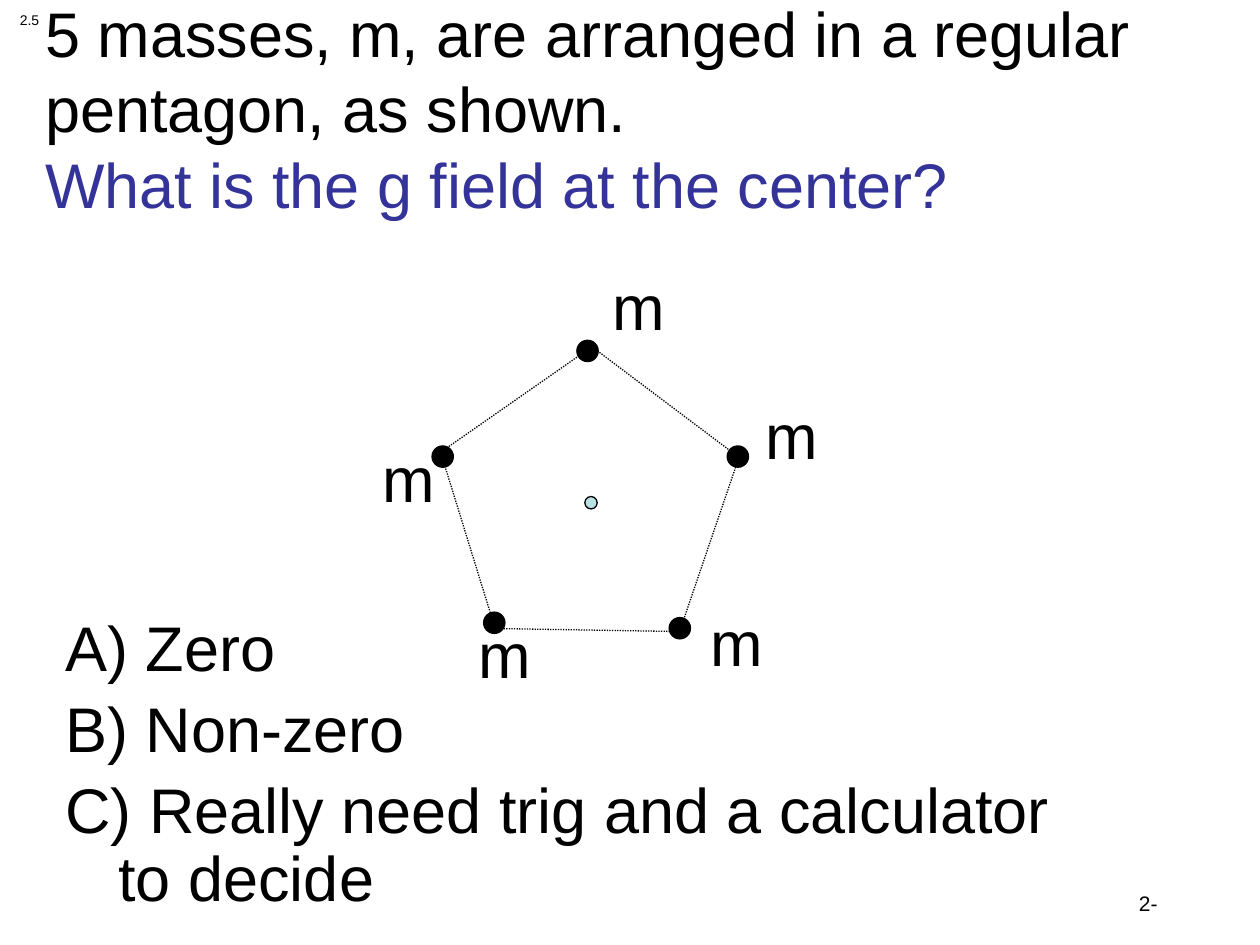
from dataclasses import dataclass

from lxml import etree
from pptx import Presentation
from pptx.dml.color import RGBColor
from pptx.enum import dml, shapes, text
from pptx.oxml import ns
from pptx.util import Cm, Pt

Point = tuple[float, float]


@dataclass(frozen=True)
class Theme:
    font: str = "Arial"
    ink: str = "000000"
    question: str = "333399"
    center: str = "BBE0E3"
    body_size: float = 36
    page_size: float = 12
    number_size: float = 8
    line_width: float = 0.75


@dataclass(frozen=True)
class Box:
    left: float
    top: float
    width: float
    height: float

    def lengths(self) -> list[Cm]:
        return [Cm(v) for v in (self.left, self.top, self.width, self.height)]


@dataclass(frozen=True)
class Mass:
    """A corner of the pentagon: dot and label corners, and the edge to the next mass."""
    dot: Point
    label: Point
    edge_start: Point
    edge_end: Point


THEME = Theme()
DOT_SIZE = 0.43
CENTER_SIZE = 0.25
LABEL_SIZE = (1.57, 1.8)

# Clockwise from the lower right corner
MASSES = [
    Mass((13.49, 12.45), (14.07, 12.04), (13.61, 12.73), (10.01, 12.67)),
    Mass((9.75, 12.34), (9.4, 12.29), (9.96, 12.6), (8.89, 9.14)),
    Mass((8.71, 8.99), (7.47, 8.74), (8.92, 9.09), (11.86, 7.04)),
    Mass((11.63, 6.86), (12.09, 5.26), (11.96, 7.01), (14.83, 9.17)),
    Mass((14.66, 8.99), (15.19, 7.87), (14.88, 9.27), (13.72, 12.67)),
]
ANSWERS = ["Zero", "Non-zero", "Really need trig and a calculator to decide"]


def add_run(paragraph, words: str, size: float = THEME.body_size, color: str = THEME.ink) -> None:
    run = paragraph.add_run()
    run.text = words
    run.font.name = THEME.font
    run.font.size = Pt(size)
    run.font.color.rgb = RGBColor.from_string(color)


def add_frame(slide, box: Box, wrap: bool = True):
    frame = slide.shapes.add_textbox(*box.lengths()).text_frame
    frame.word_wrap = wrap
    return frame


def add_label(slide, box: Box, words: str, size: float = THEME.body_size, wrap: bool = False) -> None:
    add_run(add_frame(slide, box, wrap).paragraphs[0], words, size)


def add_edge(slide, start: Point, end: Point) -> None:
    edge = slide.shapes.add_connector(
        shapes.MSO_CONNECTOR.STRAIGHT, *(Cm(v) for v in start + end))
    edge.line.color.rgb = RGBColor.from_string(THEME.ink)
    edge.line.width = Pt(THEME.line_width)
    edge.line.dash_style = dml.MSO_LINE.ROUND_DOT
    etree.SubElement(edge._element.spPr, ns.qn("a:effectLst"))


def add_dot(slide, corner: Point, size: float, color: str) -> None:
    dot = slide.shapes.add_shape(
        shapes.MSO_SHAPE.OVAL, *Box(*corner, size, size).lengths())
    dot.shadow.inherit = False
    dot.fill.solid()
    dot.fill.fore_color.rgb = RGBColor.from_string(color)
    dot.line.color.rgb = RGBColor.from_string(THEME.ink)
    dot.line.width = Pt(THEME.line_width)


def add_question(slide) -> None:
    frame = add_frame(slide, Box(0.66, 0.58, 22.86, 3.18))
    frame.vertical_anchor = text.MSO_ANCHOR.MIDDLE
    question = frame.paragraphs[0]
    add_run(question, "5 masses, m, are arranged in a regular pentagon, as shown.")
    question.add_line_break()
    add_run(question, "What is the g field at the center?", color=THEME.question)


def add_answers(slide) -> None:
    frame = add_frame(slide, Box(1.07, 12.32, 21.59, 5.08))
    for index, words in enumerate(ANSWERS):
        answer = frame.add_paragraph() if index else frame.paragraphs[0]
        answer.line_spacing = 0.9
        answer.space_before = Pt(0.2 * THEME.body_size)
        add_run(answer, " " + words)
        # Hanging indent with automatic A), B), C)
        props = answer._p.get_or_add_pPr()
        props.set("marL", str(Cm(1.07)))
        props.set("indent", str(-Cm(1.07)))
        etree.SubElement(props, ns.qn("a:buFont"), typeface=THEME.font)
        etree.SubElement(props, ns.qn("a:buAutoNum"), type="alphaUcParenR")


def main() -> None:
    deck = Presentation()
    deck.slide_width, deck.slide_height = Cm(25.4), Cm(19.05)
    slide = deck.slides.add_slide(deck.slide_layouts[6])

    # Page mark, question and answers
    add_label(slide, Box(22.71, 17.83, 1.22, 0.76), "2-", THEME.page_size, wrap=True)
    add_question(slide)
    add_answers(slide)

    # Pentagon: edges below, masses above, then the center
    for mass in MASSES:
        add_edge(slide, mass.edge_start, mass.edge_end)
    for mass in MASSES:
        add_dot(slide, mass.dot, DOT_SIZE, THEME.ink)
    add_dot(slide, (11.79, 10.01), CENTER_SIZE, THEME.center)
    for mass in MASSES:
        add_label(slide, Box(*mass.label, *LABEL_SIZE), "m")

    # Question number
    add_label(slide, Box(0.15, 0.1, 0.91, 0.58), "2.5", THEME.number_size)

    deck.save("out.pptx")


if __name__ == "__main__":
    main()
